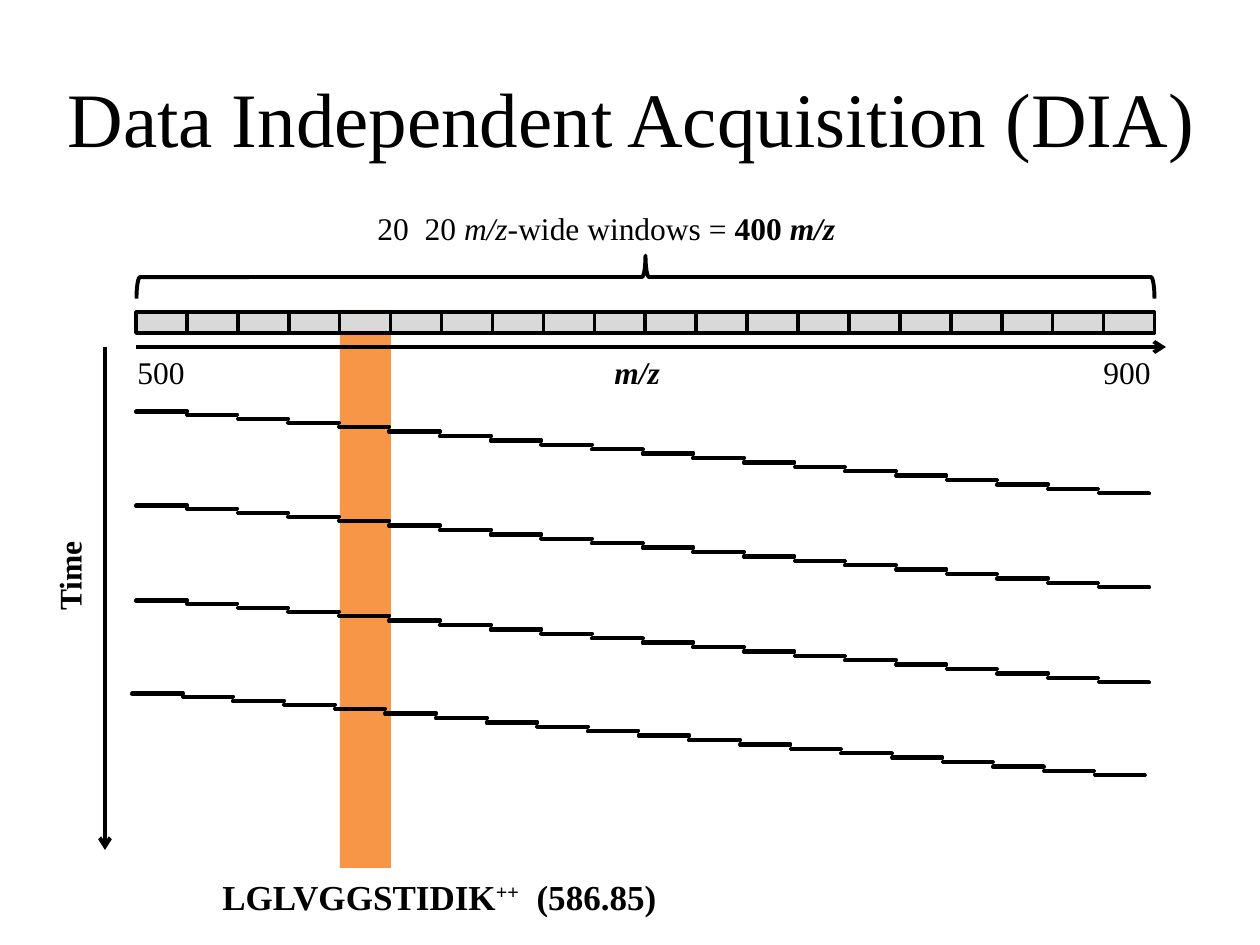
import pptx
import pptx.util
import pptx.dml.color
import pptx.enum.shapes
import pptx.enum.text
import pptx.oxml
import pptx.oxml.ns
import lxml.etree

PX = 914400 / 126
COLOURS = {"ink": "000000", "window": "D9D9D9", "scan": "FFFFFF", "peptide": "F79646"}
FONT = "Times New Roman"
SHAPES = pptx.enum.shapes.MSO_SHAPE
WINDOWS = 20


def emu(*lengths):
    return [round(length * PX) for length in lengths]


def rgb(name):
    return pptx.dml.color.RGBColor.from_string(COLOURS[name])


prs = pptx.Presentation()
prs.slide_width, prs.slide_height = emu(1260, 945)
slide = prs.slides.add_slide(prs.slide_layouts[5])

# Column of the peptide's window
column = slide.shapes.add_shape(SHAPES.RECTANGLE, *emu(340, 310, 51, 558))
column.shadow.inherit = False
column.fill.solid()
column.fill.fore_color.rgb = rgb("peptide")
column.line.fill.background()

# Title
title = slide.shapes.title
title.left, title.top, title.width, title.height = emu(53, 38, 1157, 157)
title.text_frame.auto_size = pptx.enum.text.MSO_AUTO_SIZE.NONE
title.text_frame.vertical_anchor = pptx.enum.text.MSO_ANCHOR.MIDDLE
heading = title.text_frame.paragraphs[0]
heading.alignment = pptx.enum.text.PP_ALIGN.CENTER
heading_run = heading.add_run()
heading_run.text = "Data Independent Acquisition (DIA)"
heading_run.font.name = FONT
heading_run.font.size = pptx.util.Pt(44)
heading_run.font.color.rgb = rgb("ink")

# Brace over the whole mass range
brace = slide.shapes.add_shape(SHAPES.LEFT_BRACE, *emu(624, -232, 43, 1018))
brace.rotation = 90
brace.shadow.inherit = False
brace.fill.background()
brace.line.color.rgb = rgb("ink")
brace.line.width = pptx.util.Pt(2.25)

# Axes: m/z to the right, time downwards
for x1, y1, x2, y2 in [(136, 347, 1166, 347), (105, 347, 105, 850)]:
    axis = slide.shapes.add_connector(
        pptx.enum.shapes.MSO_CONNECTOR.STRAIGHT, *emu(x1, y1, x2, y2))
    axis.line.color.rgb = rgb("ink")
    axis.line.width = pptx.util.Pt(2.25)
    lxml.etree.SubElement(axis.line._get_or_add_ln(), pptx.oxml.ns.qn("a:tailEnd"), type="arrow")
    lxml.etree.SubElement(axis._element.spPr, pptx.oxml.ns.qn("a:effectLst"))

# Four scan cycles, then the row of windows:
# left, top, height, pitch, first and later drop per step, fill
rows = [(left, top, 1, 50.65, 3.8, 4.4, "scan")
        for left, top in [(136, 411), (136, 505), (136, 600), (132, 693)]]
rows.append((136, 312, 21, 50.93, 0, 0, "window"))
for left, top, height, pitch, first_drop, later_drop, fill in rows:
    row = slide.shapes.add_group_shape()
    for i in range(WINDOWS):
        drop = min(i, 3) * first_drop + max(i - 3, 0) * later_drop
        cell = row.shapes.add_shape(
            SHAPES.RECTANGLE, *emu(left + i * pitch, top + drop, 51, height))
        cell.shadow.inherit = False
        cell.fill.solid()
        cell.fill.fore_color.rgb = rgb(fill)
        cell.line.color.rgb = rgb("ink")
        cell.line.width = pptx.util.Pt(2)

# Labels: box, wrap, rotation, size, runs as (text, style);
# style letters: b bold, i italic, ^ superscript
labels = [
    ((365, 203, 559, 50), True, 0, 18,
     [("20  20 ", ""), ("m/z-", "i"), ("wide windows = ", ""), ("400 ", "b"), ("m/z", "bi")]),
    ((602, 347, 86, 50), False, 0, 18, [("m/z", "bi")]),
    ((125, 347, 74, 50), False, 0, 18, [("500", "")]),
    ((1091, 347, 74, 50), False, 0, 18, [("900", "")]),
    ((20, 549, 98, 50), False, 270, 18, [("Time", "b")]),
    ((210, 869, 856, 55), True, 0, 20,
     [("LGLVGGSTIDIK", "b"), ("++", "b^"), ("  (586.85)", "b")]),
]
for box, wrap, rotation, size, runs in labels:
    label = slide.shapes.add_textbox(*emu(*box))
    label.rotation = rotation
    label.text_frame.word_wrap = wrap
    label.text_frame.auto_size = pptx.enum.text.MSO_AUTO_SIZE.SHAPE_TO_FIT_TEXT
    for text, style in runs:
        run = label.text_frame.paragraphs[0].add_run()
        run.text = text
        run.font.name = FONT
        run.font.size = pptx.util.Pt(size)
        run.font.color.rgb = rgb("ink")
        run.font.bold = "b" in style
        run.font.italic = "i" in style
        if "^" in style:
            run.font._element.set("baseline", "30000")

prs.save("out.pptx")
